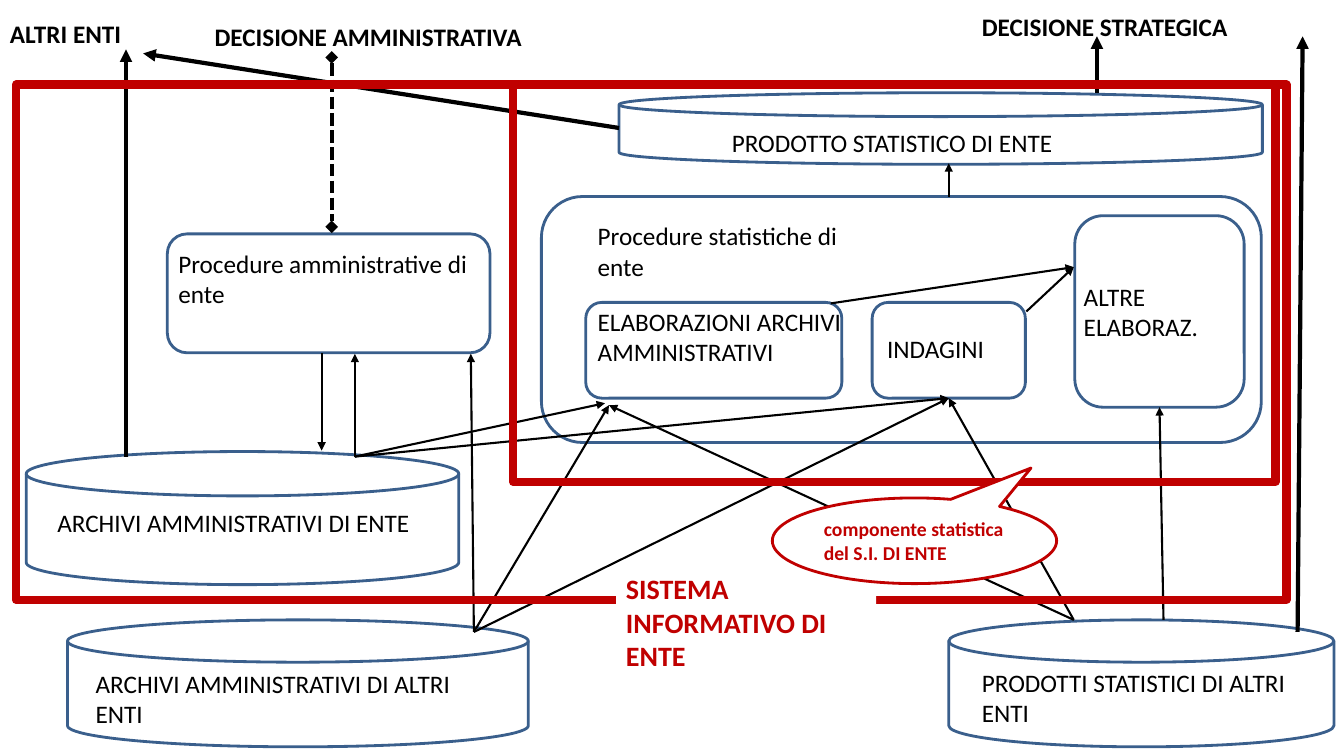
from lxml.etree import SubElement
from pptx import Presentation
from pptx.dml.color import RGBColor
from pptx.enum.dml import MSO_LINE
from pptx.enum.shapes import MSO_CONNECTOR, MSO_SHAPE
from pptx.enum.text import MSO_ANCHOR, PP_ALIGN
from pptx.oxml.ns import qn
from pptx.util import Inches, Pt

BLACK = RGBColor(0x00, 0x00, 0x00)
WHITE = RGBColor(0xFF, 0xFF, 0xFF)
BLUE = RGBColor(0x3A, 0x5F, 0x8C)
RED = RGBColor(0xC0, 0x00, 0x00)

ARCHIVE = MSO_SHAPE.FLOWCHART_MAGNETIC_DISK
PROCESS = MSO_SHAPE.FLOWCHART_ALTERNATE_PROCESS

# Points shared by several flows
OWN_ARCHIVES = (3.52, 4.53)
OTHER_ARCHIVES = (4.7, 6.27)
OTHER_PRODUCTS = (10.65, 6.15)
PROCESSING = (6.04, 4.02)
SURVEYS = (9.41, 3.95)
FURTHER_PROCESSING = (10.65, 2.65)


def add_outline(slide, kind, box, color=BLUE, width=2, fill=None):
    shape = slide.shapes.add_shape(kind, *map(Inches, box))
    shape.shadow.inherit = False
    if fill is None:
        shape.fill.background()
    else:
        shape.fill.solid()
        shape.fill.fore_color.rgb = fill
    if width:
        shape.line.color.rgb = color
        shape.line.width = Pt(width)
    else:
        shape.line.fill.background()
    return shape


def write(shape, text, size=18, color=BLACK, bold=False,
          anchor=MSO_ANCHOR.TOP, wrap=True):
    frame = shape.text_frame
    frame.word_wrap = wrap
    frame.vertical_anchor = anchor
    frame.text = text
    paragraph = frame.paragraphs[0]
    paragraph.alignment = PP_ALIGN.LEFT
    font = paragraph.runs[0].font
    font.name = "Calibri"
    font.size = Pt(size)
    font.bold = bold
    font.color.rgb = color


def add_label(slide, text, box, bold=False, wrap=True):
    label = slide.shapes.add_textbox(*map(Inches, box))
    write(label, text, bold=bold, wrap=wrap)


def add_flow(slide, start, end, width=1.5, target=None, both_diamonds=False):
    """Draw an arrow; a target is joined at the middle of its bottom side."""
    flow = slide.shapes.add_connector(
        MSO_CONNECTOR.STRAIGHT, *map(Inches, (*start, *end)))
    flow.line.color.rgb = BLACK
    flow.line.width = Pt(width)
    if both_diamonds:
        flow.line.dash_style = MSO_LINE.SQUARE_DOT
    if target is not None:
        flow.end_connect(target, 2)
    properties = flow._element.spPr
    line = properties.find(qn("a:ln"))
    if both_diamonds:
        SubElement(line, qn("a:headEnd"), type="diamond")
    SubElement(line, qn("a:tailEnd"),
               type="diamond" if both_diamonds else "triangle")
    SubElement(properties, qn("a:effectLst"))


def add_archives_and_procedures(slide):
    """Return the survey and further processing boxes, which flows join."""
    nodes = [
        (ARCHIVE, (0.26, 4.48, 4.29, 1.32),
         "ARCHIVI AMMINISTRATIVI DI ENTE", (0.47, 4.98, 3.74, 0.4)),
        (PROCESS, (1.66, 2.32, 3.2, 1.18),
         "Procedure amministrative di ente", (1.67, 2.41, 3.19, 0.71)),
        (PROCESS, (5.37, 1.95, 7.14, 2.44),
         "Procedure statistiche di ente", (5.83, 2.14, 2.83, 0.71)),
        (ARCHIVE, (0.67, 6.15, 4.57, 1.26),
         "ARCHIVI AMMINISTRATIVI DI ALTRI ENTI", (0.85, 6.58, 4.05, 0.71)),
        (PROCESS, (8.65, 3, 1.52, 0.95),
         "INDAGINI", (8.7, 3.26, 1.17, 0.4)),
        (PROCESS, (10.66, 2.14, 1.68, 1.9),
         "ALTRE ELABORAZ.", (10.65, 2.74, 1.88, 0.71)),
        (PROCESS, (5.81, 3, 2.54, 0.95),
         "ELABORAZIONI ARCHIVI AMMINISTRATIVI", (5.83, 2.99, 2.87, 0.71)),
        (ARCHIVE, (9.41, 6.15, 3.82, 1.26),
         "PRODOTTI STATISTICI DI ALTRI ENTI", (9.64, 6.57, 3.36, 0.71)),
        (ARCHIVE, (6.14, 0.92, 6.38, 0.71),
         "PRODOTTO STATISTICO DI ENTE", (7.16, 1.21, 4.51, 0.4)),
    ]
    outlines = {}
    for kind, box, text, label_box in nodes:
        outlines[text] = add_outline(slide, kind, box)
        add_label(slide, text, label_box)
    return outlines["INDAGINI"], outlines["ALTRE ELABORAZ."]


def add_inner_flows(slide, surveys, further_processing):
    for start, end in [
        ((3.19, 3.5), (3.19, 4.47)),
        (OWN_ARCHIVES, (3.52, 3.51)),
        (OTHER_ARCHIVES, PROCESSING),
        (OTHER_ARCHIVES, (4.67, 3.51)),
        (OWN_ARCHIVES, (6, 4)),
        (OTHER_PRODUCTS, PROCESSING),
        ((9.41, 1.95), (9.41, 1.62)),
        ((10.18, 3.09), FURTHER_PROCESSING),
        ((8.24, 3.01), FURTHER_PROCESSING),
    ]:
        add_flow(slide, start, end)
    for source in (OWN_ARCHIVES, OTHER_ARCHIVES, OTHER_PRODUCTS):
        add_flow(slide, source, SURVEYS, target=surveys)
    add_flow(slide, (11.54, 6.15), (11.5, 4.04), target=further_processing)


def add_destinations(slide):
    for text, box in [
        ("DECISIONE AMMINISTRATIVA", (2.03, 0.16, 3.27, 0.4)),
        ("DECISIONE STRATEGICA", (9.64, 0.06, 2.66, 0.4)),
        ("ALTRI ENTI", (0, 0.13, 1.31, 0.4)),
    ]:
        add_label(slide, text, box, bold=True, wrap=False)
    for start, end in [
        ((12.87, 6.27), (12.92, 0.36)),
        ((10.88, 0.92), (10.88, 0.36)),
        ((6.14, 1.27), (1.42, 0.53)),
        ((1.25, 4.53), (1.25, 0.49)),
    ]:
        add_flow(slide, start, end, width=3)
    add_flow(slide, (3.29, 0.57), (3.29, 2.25), width=3, both_diamonds=True)


def add_system_frames(slide):
    for box in [(0.16, 0.84, 12.6, 5.11), (5.09, 0.84, 7.56, 3.94)]:
        add_outline(slide, MSO_SHAPE.RECTANGLE, box, RED, 6)

    system_name = add_outline(slide, MSO_SHAPE.RECTANGLE,
                              (6.11, 5.62, 2.58, 1.11), width=0, fill=WHITE)
    write(system_name, "SISTEMA INFORMATIVO DI ENTE", 20, RED, bold=True)

    component = add_outline(slide, MSO_SHAPE.OVAL_CALLOUT,
                            (7.66, 4.94, 2.82, 0.85), RED, fill=WHITE)
    component.adjustments[0] = 0.41
    component.adjustments[1] = -0.85
    write(component, "componente statistica del S.I. DI ENTE", 14, RED,
          bold=True, anchor=MSO_ANCHOR.MIDDLE)


def main():
    presentation = Presentation()
    presentation.slide_width = Inches(13.33)
    presentation.slide_height = Inches(7.5)
    slide = presentation.slides.add_slide(presentation.slide_layouts[6])

    surveys, further_processing = add_archives_and_procedures(slide)
    add_inner_flows(slide, surveys, further_processing)
    add_destinations(slide)
    add_system_frames(slide)

    presentation.save("out.pptx")


if __name__ == "__main__":
    main()
